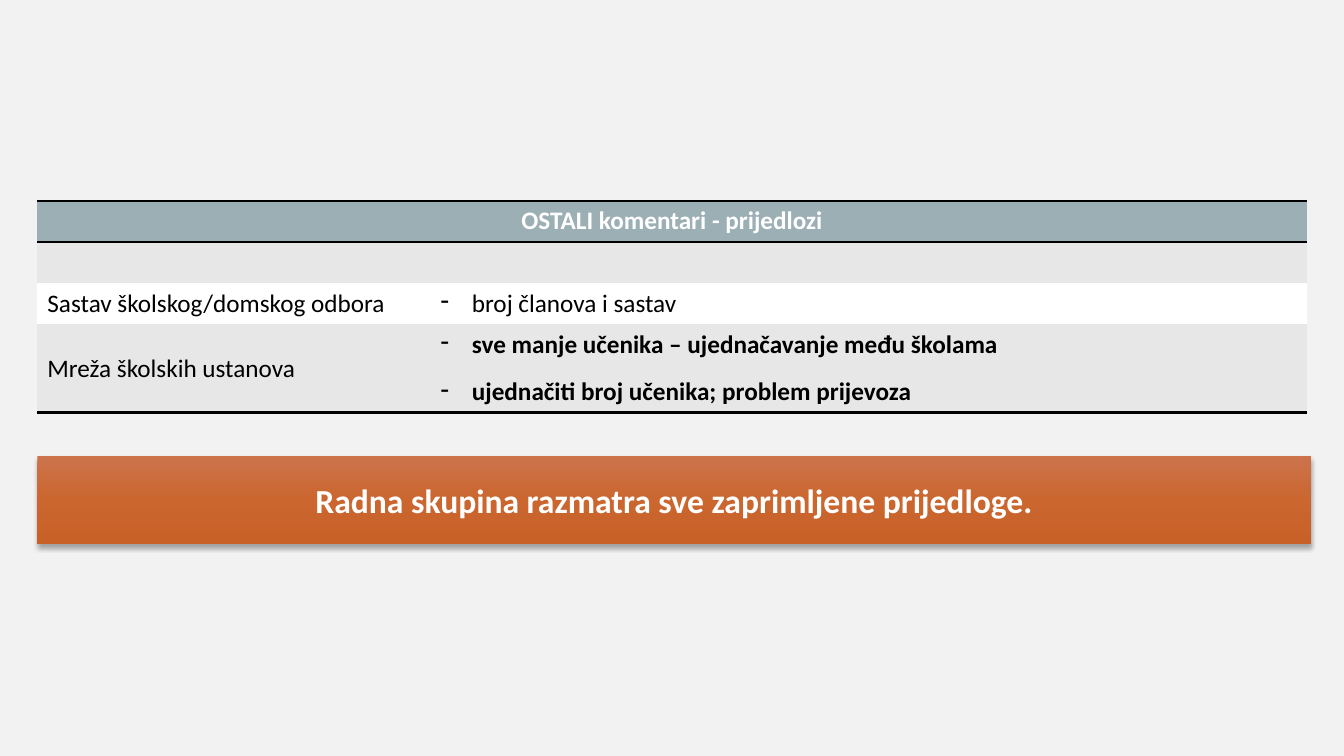
import lxml.etree
import pptx
import pptx.dml.color
import pptx.enum.shapes
import pptx.enum.text
import pptx.oxml
import pptx.oxml.ns
import pptx.util
from dataclasses import dataclass

MIDDLE = pptx.enum.text.MSO_ANCHOR.MIDDLE
CENTER = pptx.enum.text.PP_ALIGN.CENTER
NO_TABLE_STYLE = "{2D5ABB26-0587-4C30-8999-92F81FD0307C}"


@dataclass(frozen=True)
class Theme:
    font: str = "Calibri"
    page: str = "F2F2F2"
    header: str = "9BAFB5"
    band: str = "E7E7E7"
    light: str = "FFFFFF"
    dark: str = "000000"
    banner: tuple = ((0, "CC734B"), (50, "CB662F"), (100, "C86128"))
    body_size: int = 18
    banner_size: int = 24
    rule_width: int = 2
    gap: int = 6


def rgb(value):
    return pptx.dml.color.RGBColor.from_string(value)


def add_xml(parent, markup, index=None):
    namespaces = pptx.oxml.ns.nsdecls("a")
    tag, rest = markup[1:].split(" ", 1)
    element = pptx.oxml.parse_xml(f"<{tag} {namespaces} {rest}")
    parent.insert(len(parent) if index is None else index, element)


def write(frame, text, *, font, size, color, bold=False, align=None, gap=None, indent=None):
    for number, line in enumerate(text.split("\n")):
        para = frame.add_paragraph() if number else frame.paragraphs[0]
        para.alignment = align
        if gap is not None:
            para.space_before = para.space_after = pptx.util.Pt(gap)
        if indent is not None:
            properties = para._p.get_or_add_pPr()
            properties.set("marL", str(indent))
            properties.set("indent", str(-indent))
            add_xml(properties, '<a:buChar char="-"/>')
        para.font.size = pptx.util.Pt(size)
        span = para.add_run()
        span.text = line
        span.font.name = font
        span.font.size = pptx.util.Pt(size)
        span.font.bold = bold
        span.font.color.rgb = rgb(color)


class Page:
    def __init__(self, deck, theme, columns=36, rows=18):
        self.theme = theme
        self.column = deck.slide_width / columns
        self.row = deck.slide_height / rows
        self.slide = deck.slides.add_slide(deck.slide_layouts[6])
        self.slide.background.fill.solid()
        self.slide.background.fill.fore_color.rgb = rgb(theme.page)

    def across(self, columns):
        return round(columns * self.column)

    def down(self, rows):
        return round(rows * self.row)

    def place(self, left, top, width, height):
        return self.across(left), self.down(top), self.across(width), self.down(height)

    def table(self, left, top, widths, heights):
        area = self.place(left, top, sum(widths), sum(heights))
        table = self.slide.shapes.add_table(len(heights), len(widths), *area).table
        table.first_row = table.horz_banding = False
        table._tbl.tblPr.find(pptx.oxml.ns.qn("a:tableStyleId")).text = NO_TABLE_STYLE
        for column, width in zip(table.columns, widths):
            column.width = self.across(width)
        for row, height in zip(table.rows, heights):
            row.height = self.down(height)
        return table

    def cell(self, cell, text, fill, rules=(), anchor=None, **style):
        cell.fill.solid()
        cell.fill.fore_color.rgb = rgb(fill)
        cell.vertical_anchor = anchor
        for index, side in enumerate(rules):
            width = pptx.util.Pt(self.theme.rule_width)
            add_xml(
                cell._tc.get_or_add_tcPr(),
                f'<a:ln{side} w="{width}"><a:solidFill><a:srgbClr val="{self.theme.dark}"/>'
                f"</a:solidFill></a:ln{side}>",
                index,
            )
        settings = {"font": self.theme.font, "size": self.theme.body_size, "color": self.theme.dark}
        if text:
            write(cell.text_frame, text, **(settings | style))
        else:
            cell.text_frame.paragraphs[0].font.size = pptx.util.Pt(self.theme.body_size)

    def banner(self, text, left, top, width, height):
        box = self.slide.shapes.add_shape(
            pptx.enum.shapes.MSO_SHAPE.RECTANGLE, *self.place(left, top, width, height)
        )
        box.line.fill.background()
        stops = "".join(
            f'<a:gs pos="{position * 1000}"><a:srgbClr val="{color}"/></a:gs>'
            for position, color in self.theme.banner
        )
        properties = box._element.spPr
        add_xml(
            properties,
            f'<a:gradFill rotWithShape="1"><a:gsLst>{stops}</a:gsLst>'
            '<a:lin ang="5400000" scaled="0"/></a:gradFill>',
            2,
        )
        blur, distance = pptx.util.Pt(3.5), pptx.util.Pt(2.2)
        box.shadow.inherit = False
        add_xml(
            properties.find(pptx.oxml.ns.qn("a:effectLst")),
            f'<a:outerShdw blurRad="{blur}" dist="{distance}" dir="5400000" rotWithShape="0">'
            f'<a:srgbClr val="{self.theme.dark}"><a:alpha val="32000"/></a:srgbClr></a:outerShdw>',
        )
        frame = box.text_frame
        frame.word_wrap = True
        frame.vertical_anchor = MIDDLE
        write(frame, text, font=self.theme.font, size=self.theme.banner_size,
              color=self.theme.light, bold=True, align=CENTER)


def main():
    deck = pptx.Presentation()
    deck.slide_width = pptx.util.Inches(13.33)
    deck.slide_height = pptx.util.Inches(7.5)
    theme = Theme()
    page = Page(deck, theme)

    comments = page.table(1, 4.78, (10.53, 23.47), (0.98, 0.98, 0.98, 2.1))
    comments.cell(0, 0).merge(comments.cell(0, 1))
    page.cell(comments.cell(0, 0), "OSTALI komentari - prijedlozi", theme.header, "TB", MIDDLE,
              color=theme.light, bold=True, align=CENTER)
    topics = (
        ("", "", theme.band, "", False),
        ("Sastav školskog/domskog odbora", "broj članova i sastav", theme.light, "", False),
        ("Mreža školskih ustanova",
         "sve manje učenika – ujednačavanje među školama\n"
         "ujednačiti broj učenika; problem prijevoza", theme.band, "B", True),
    )
    for row, (topic, remarks, fill, rules, bold) in enumerate(topics, 1):
        page.cell(comments.cell(row, 0), topic, fill, rules, MIDDLE)
        page.cell(comments.cell(row, 1), remarks, fill, rules, bold=bold,
                  gap=theme.gap, indent=page.across(0.84))

    page.banner("Radna skupina razmatra sve zaprimljene prijedloge.", 1, 10.87, 34.11, 2.09)
    deck.save("out.pptx")


if __name__ == "__main__":
    main()
